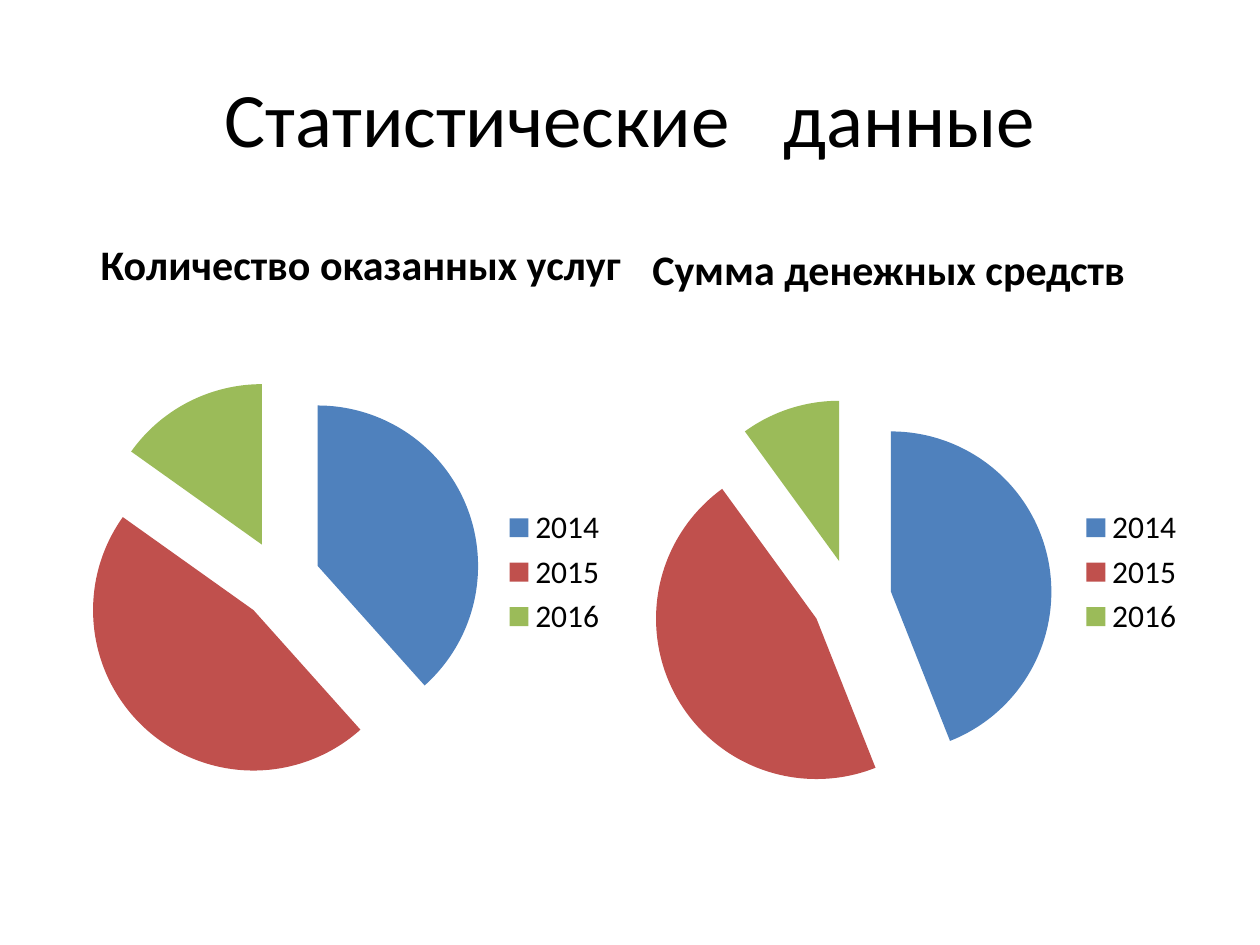
from lxml.etree import SubElement
from pptx import Presentation
from pptx.chart.data import CategoryChartData
from pptx.dml.color import RGBColor
from pptx.enum.chart import XL_CHART_TYPE as ChartType, XL_LEGEND_POSITION as LegendPosition
from pptx.enum.text import MSO_ANCHOR as Anchor, PP_ALIGN as Align
from pptx.oxml import parse_xml
from pptx.oxml.ns import nsdecls, qn
from pptx.util import Cm, Pt

BLACK = RGBColor(0x00, 0x00, 0x00)
BLUE = RGBColor(0x4F, 0x81, 0xBD)
RED = RGBColor(0xC0, 0x50, 0x4D)
GREEN = RGBColor(0x9B, 0xBB, 0x59)

YEARS = ("2014", "2015", "2016")
YEAR_COLORS = (BLUE, RED, GREEN)
COLUMN_WIDTH = 11.23
CHART_TOP, CHART_HEIGHT = 6.05, 10.97


class SlideBuilder:
    """Holds the text style and the current slide."""

    font_name = "Calibri"
    color = BLACK

    def __init__(self, deck):
        self.page = deck.slides.add_slide(deck.slide_layouts[5])

    def format_font(self, font, size, bold=False):
        values = {"name": self.font_name, "size": Pt(size), "bold": bold}
        for name, value in values.items():
            setattr(font, name, value)
        font.color.rgb = self.color

    def title(self, words, left, top, width, height, gap):
        """Title whose words stand apart by a space widened by gap points."""
        shape = self.page.shapes.title
        place = {"left": left, "top": top, "width": width, "height": height}
        for name, value in place.items():
            setattr(shape, name, Cm(value))
        shape.text_frame.vertical_anchor = Anchor.MIDDLE
        para = shape.text_frame.paragraphs[0]
        para.alignment = Align.CENTER
        first, last = words
        for text in (first, " ", last):
            span = para.add_run()
            span.text = text
            self.format_font(span.font, 44)
            if text == " ":
                span.font._element.set("spc", str(gap * 100))

    def heading(self, text, left, top):
        box = self.page.shapes.add_textbox(Cm(left), Cm(top), Cm(COLUMN_WIDTH), Cm(1.78))
        frame = box.text_frame
        frame.word_wrap = True
        frame.vertical_anchor = Anchor.BOTTOM
        span = frame.paragraphs[0].add_run()
        span.text = text
        self.format_font(span.font, 24, bold=True)

    def pie(self, values, left, plot):
        data = CategoryChartData()
        data.categories = YEARS
        data.add_series("Series 1", values)
        chart = self.page.shapes.add_chart(
            ChartType.PIE, Cm(left), Cm(CHART_TOP), Cm(COLUMN_WIDTH), Cm(CHART_HEIGHT), data
        ).chart
        self.format_font(chart.font, 18)
        chart.has_title = False
        chart.has_legend = True
        chart.legend.position = LegendPosition.RIGHT
        chart.legend.include_in_layout = False
        chart.plots[0].vary_by_categories = True

        # Slice colours
        series = chart.plots[0].series[0]
        for index, color in enumerate(YEAR_COLORS):
            fill = series.points[index].format.fill
            fill.solid()
            fill.fore_color.rgb = color

        # Slices pulled apart
        explosion = parse_xml(f'<c:explosion {nsdecls("c")} val="25"/>')
        series._element.find(qn("c:dPt")).addprevious(explosion)

        # Plot area placed by hand
        area = chart._chartSpace.chart.plotArea
        for old in area.findall(qn("c:layout")):
            area.remove(old)
        layout = parse_xml(f'<c:layout {nsdecls("c")}/>')
        manual = SubElement(layout, qn("c:manualLayout"))
        settings = {"layoutTarget": "inner", "xMode": "edge", "yMode": "edge"}
        settings.update(zip("xywh", plot))
        for name, value in settings.items():
            SubElement(manual, qn(f"c:{name}")).set("val", str(value))
        area.insert(0, layout)


def main():
    deck = Presentation()
    deck.slide_width, deck.slide_height = Cm(25.4), Cm(19.05)
    builder = SlideBuilder(deck)

    # Title
    builder.title(("Статистические", "данные"), 1.27, 0.76, 22.86, 3.18, gap=20)

    # Left column: number of services
    builder.heading("Количество оказанных услуг", 1.78, 4.17)
    builder.pie((38, 46, 15), 1.27, (0.03, 0.05, 0.72, 0.93))

    # Right column: sums of money
    builder.heading("Сумма денежных средств", 12.9, 4.27)
    builder.pie((44, 46, 10), 12.9, (0.02, 0.14, 0.72, 0.82))

    deck.save("out.pptx")


if __name__ == "__main__":
    main()
